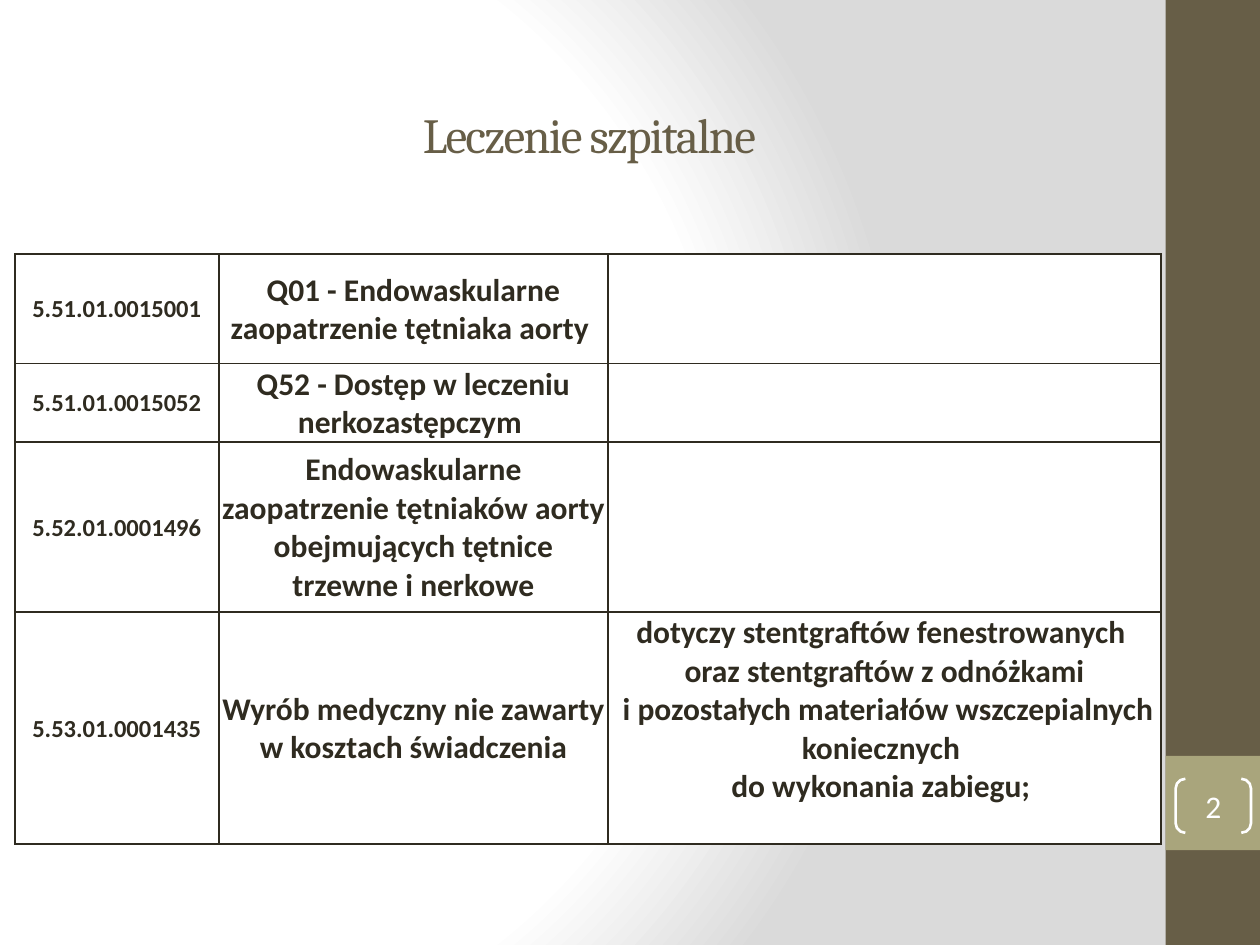
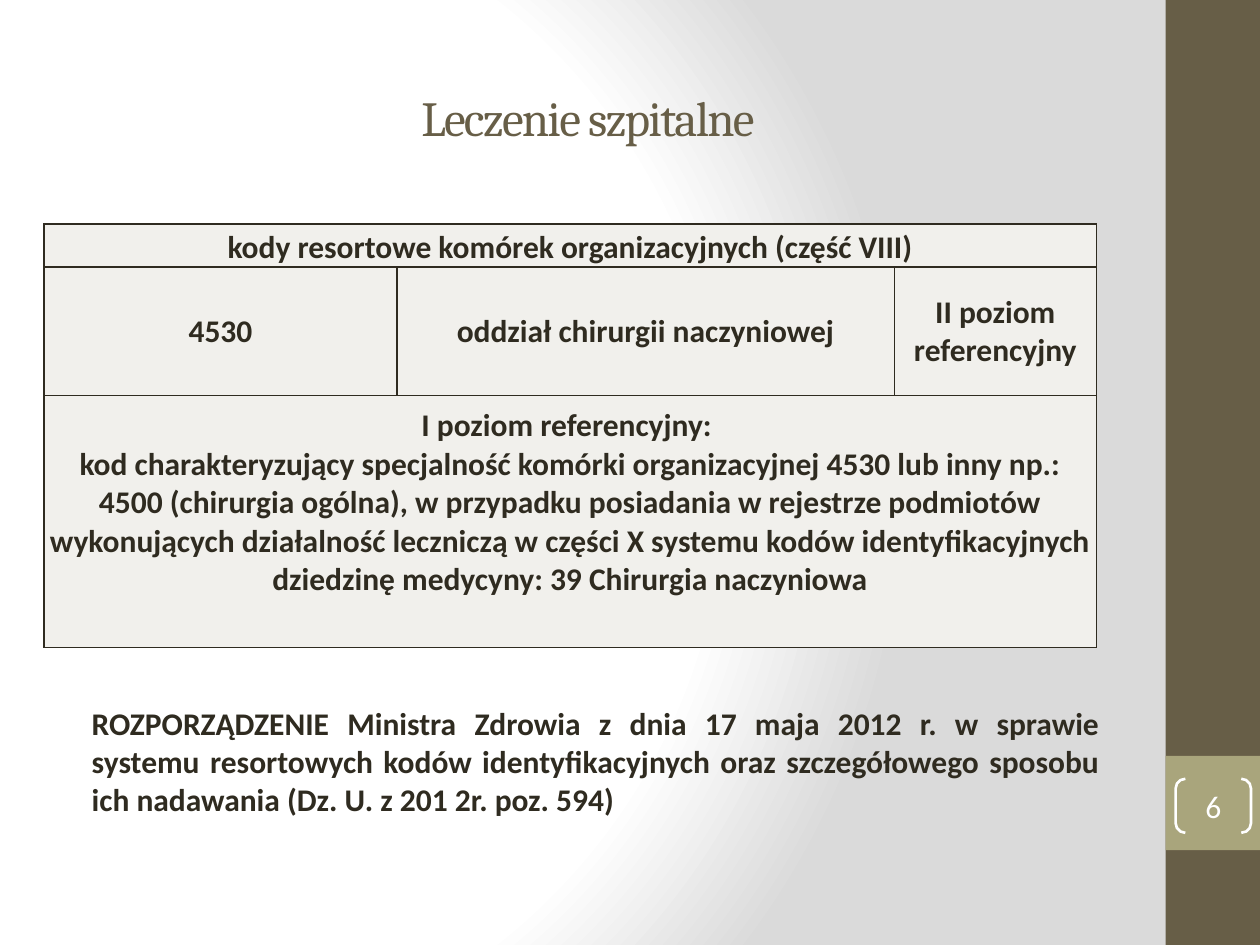
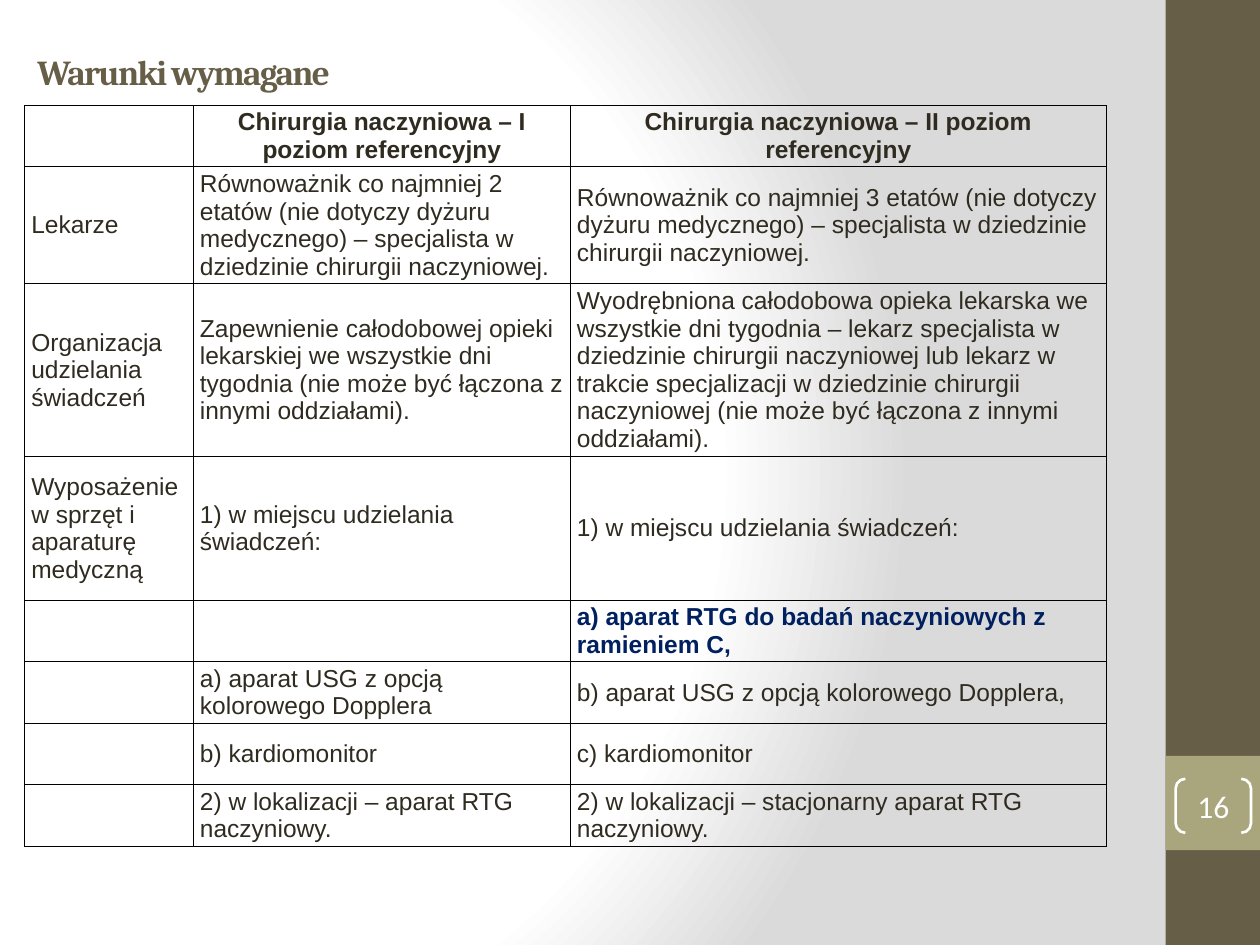
from dataclasses import dataclass, replace
from typing import Optional

import lxml.etree
import pptx
import pptx.dml.color
import pptx.enum.shapes
import pptx.enum.text
import pptx.oxml
import pptx.oxml.ns
import pptx.util

Cm = pptx.util.Cm
Pt = pptx.util.Pt
Align = pptx.enum.text.PP_ALIGN
Anchor = pptx.enum.text.MSO_ANCHOR
Shape = pptx.enum.shapes.MSO_SHAPE
qn = pptx.oxml.ns.qn


@dataclass(frozen=True)
class Theme:
    ink: str = "2F2B20"
    brown: str = "675E47"
    olive: str = "A9A57C"
    white: str = "FFFFFF"
    gray: str = "DADADA"
    pale: str = "F1F0EC"
    navy: str = "002060"
    black: str = "000000"
    head: str = "Cambria"
    body: str = "Calibri"
    plain: str = "Arial"
    title: int = 28
    minor: int = 20
    text: int = 18
    small: int = 14


THEME = Theme()


@dataclass(frozen=True)
class Style:
    """Look of a block of text, and of the cell that holds it."""
    font: str = THEME.body
    size: int = THEME.text
    color: str = THEME.ink
    bold: bool = True
    align: Align = Align.CENTER
    anchor: Anchor = Anchor.MIDDLE
    pads: tuple = (0.03, 0.03, 0.03, 0)  # left, top, right, bottom in cm
    fill: Optional[str] = None
    edge: str = THEME.ink
    width: float = 1


def tint(color):
    return pptx.dml.color.RGBColor.from_string(color)


def write(frame, text, style):
    frame.text = text
    frame.word_wrap = True
    for para in frame.paragraphs:
        para.alignment = style.align
        para.font.name = style.font
        para.font.size = Pt(style.size)
        para.font.bold = style.bold
        para.font.color.rgb = tint(style.color)


def pad(item, pads):
    """Set the margins of a cell or a text frame."""
    item.margin_left, item.margin_top, item.margin_right, item.margin_bottom = map(Cm, pads)


def add_block(slide, kind, box, fill=None):
    shape = slide.shapes.add_shape(kind, *map(Cm, box))
    shape.shadow.inherit = False
    shape.line.fill.background()
    if fill:
        shape.fill.solid()
        shape.fill.fore_color.rgb = tint(fill)
    else:
        shape.fill.background()
    return shape


def set_back(master):
    """Give the master a round gradient that darkens to the right."""
    master.background.fill.solid()
    solid = master.element.find(".//" + qn("a:solidFill"))
    stops = ((0, THEME.white), (75, THEME.white), (100, THEME.gray))
    marks = "".join(
        f'<a:gs pos="{pos * 1000}"><a:srgbClr val="{color}"/></a:gs>' for pos, color in stops)
    grad = pptx.oxml.parse_xml(
        f'<a:gradFill {pptx.oxml.ns.nsdecls("a")} rotWithShape="1"><a:gsLst>{marks}</a:gsLst>'
        '<a:path path="circle"><a:fillToRect l="20000" t="50000" r="100000" b="50000"/></a:path>'
        '</a:gradFill>')
    solid.getparent().replace(solid, grad)


def set_bands(master, slide):
    """Draw the side bands on a slide, then move them to the master."""
    bands = (((23.5, 0, 1.9, 19.05), THEME.brown), ((23.5, 15.24, 1.9, 1.9), THEME.olive))
    for n, (box, fill) in enumerate(bands):
        band = add_block(slide, Shape.RECTANGLE, box, fill)
        band.element.nvSpPr.cNvPr.set("id", str(100 + n))
        master.element.cSld.spTree.insert(2 + n, band.element)


def add_title(slide, text, box, size=THEME.title, bold=False, align=Align.CENTER):
    title = slide.shapes.title
    title.left, title.top, title.width, title.height = map(Cm, box)
    frame = title.text_frame
    write(frame, text, Style(THEME.head, size, THEME.brown, bold, align))
    frame.vertical_anchor = Anchor.MIDDLE
    for run in frame.paragraphs[0].runs:
        run.font._element.set("spc", "-100")


def add_number(slide, number):
    mark = add_block(slide, Shape.DOUBLE_BRACKET, (23.7, 15.7, 1.52, 1.09))
    mark.adjustments[0] = 0.18
    mark.line.color.rgb = tint(THEME.white)
    mark.line.width = Pt(1.5)
    frame = mark.text_frame
    write(frame, str(number), Style(color=THEME.white, bold=False))
    frame.vertical_anchor = Anchor.MIDDLE
    pad(frame, (0, 0, 0, 0))


def add_note(slide, text, box):
    frame = slide.shapes.add_textbox(*map(Cm, box)).text_frame
    write(frame, text, Style(align=Align.JUSTIFY))
    pad(frame, (0, 0, 0, 0))


def set_edges(cell, color, width):
    props = cell._tc.get_or_add_tcPr()
    for n, side in enumerate("LRTB"):
        line = lxml.etree.Element(qn("a:ln" + side), w=str(int(Pt(width))))
        solid = lxml.etree.SubElement(line, qn("a:solidFill"))
        lxml.etree.SubElement(solid, qn("a:srgbClr"), val=color)
        props.insert(n, line)


def set_cell(cell, text, style):
    write(cell.text_frame, text, style)
    pad(cell, style.pads)
    cell.vertical_anchor = style.anchor
    if style.fill:
        cell.fill.solid()
        cell.fill.fore_color.rgb = tint(style.fill)
    else:
        cell.fill.background()
    set_edges(cell, style.edge, style.width)


def add_grid(slide, spot, cols, rows, texts, pick):
    """Add a table; pick(row, col) gives each cell's style."""
    size = (sum(cols), sum(rows))
    frame = slide.shapes.add_table(len(rows), len(cols), *map(Cm, spot + size))
    table = frame.table
    table.first_row = table.horz_banding = False
    for col, width in zip(table.columns, cols):
        col.width = Cm(width)
    for row, height in zip(table.rows, rows):
        row.height = Cm(height)
    for r, line in enumerate(texts):
        for c, text in enumerate(line):
            set_cell(table.cell(r, c), text, pick(r, c))
    return table


def fill_codes(slide):
    add_title(slide, "Leczenie szpitalne", (1.3, 1.32, 21.16, 2.77))
    base = Style(fill=THEME.white)
    code = replace(base, size=THEME.small)
    last = replace(base, pads=(0.03, 0.03, 0.03, 0.77))
    texts = (
        ("5.51.01.0015001", "Q01 - Endowaskularne zaopatrzenie tętniaka aorty ", ""),
        ("5.51.01.0015052", "Q52 - Dostęp w leczeniu nerkozastępczym ", ""),
        ("5.52.01.0001496", "Endowaskularne zaopatrzenie tętniaków aorty "
         "obejmujących tętnice trzewne i nerkowe", ""),
        ("5.53.01.0001435", "Wyrób medyczny nie zawarty w kosztach świadczenia",
         "dotyczy stentgraftów fenestrowanych \noraz stentgraftów z odnóżkami\n"
         " i pozostałych materiałów wszczepialnych koniecznych \ndo wykonania zabiegu; "),
    )

    def pick(row, col):
        if col == 0:
            return code
        return last if (row, col) == (3, 2) else base

    add_grid(slide, (0.3, 5.12), (4.11, 7.85, 11.14), (2.21, 1.57, 3.43, 4.62), texts, pick)
    add_number(slide, 2)


def fill_units(slide):
    add_title(slide, "Leczenie szpitalne", (1.27, 0.76, 21.16, 3.18))
    base = Style(fill=THEME.pale)
    looks = (replace(base, anchor=Anchor.BOTTOM), base,
             replace(base, pads=(0.03, 0.03, 0.03, 0.77)))
    texts = (
        ("kody resortowe komórek organizacyjnych (część VIII)", "", ""),
        ("4530", "oddział chirurgii naczyniowej", "II poziom referencyjny"),
        ("I poziom referencyjny: \n"
         "kod charakteryzujący specjalność komórki organizacyjnej 4530 lub inny np.: "
         "4500 (chirurgia ogólna), w przypadku posiadania w rejestrze podmiotów "
         "wykonujących działalność leczniczą w części X systemu kodów identyfikacyjnych "
         "dziedzinę medycyny: 39 Chirurgia naczyniowa", "", ""),
    )
    table = add_grid(slide, (0.89, 4.52), (7.11, 10.03, 4.07), (0.86, 2.59, 5.08), texts,
                     lambda row, col: looks[row])
    for row in (0, 2):
        table.cell(row, 0).merge(table.cell(row, 2))
    add_note(slide, "ROZPORZĄDZENIE Ministra Zdrowia z dnia 17 maja 2012 r. w sprawie systemu "
             "resortowych kodów identyfikacyjnych oraz szczegółowego sposobu ich nadawania "
             "(Dz. U. z 201 2r. poz. 594)", (1.85, 14.2, 20.32, 2.4))
    add_number(slide, 6)


def fill_terms(slide):
    add_title(slide, "Warunki wymagane", (0.5, 0.74, 21.16, 1.4), THEME.minor, True, Align.LEFT)
    base = Style(THEME.plain, THEME.small, bold=False, align=Align.LEFT,
                 pads=(0.13, 0.06, 0.13, 0.06), edge=THEME.black, width=0.75)
    head = replace(base, bold=True, align=Align.CENTER)
    stress = replace(base, bold=True, color=THEME.navy)
    texts = (
        ("", "Chirurgia naczyniowa – I poziom referencyjny",
         "Chirurgia naczyniowa – II poziom referencyjny"),
        ("Lekarze",
         "Równoważnik co najmniej 2 etatów (nie dotyczy dyżuru medycznego) – "
         "specjalista w dziedzinie chirurgii naczyniowej.",
         "Równoważnik co najmniej 3 etatów (nie dotyczy dyżuru medycznego) – "
         "specjalista w dziedzinie chirurgii naczyniowej."),
        ("Organizacja udzielania świadczeń",
         "Zapewnienie całodobowej opieki lekarskiej we wszystkie dni tygodnia "
         "(nie może być łączona z innymi oddziałami).",
         "Wyodrębniona całodobowa opieka lekarska we wszystkie dni tygodnia – lekarz "
         "specjalista w dziedzinie chirurgii naczyniowej lub lekarz w trakcie specjalizacji "
         "w dziedzinie chirurgii naczyniowej (nie może być łączona z innymi oddziałami)."),
        ("Wyposażenie w sprzęt i aparaturę medyczną",
         "1) w miejscu udzielania świadczeń:", "1) w miejscu udzielania świadczeń:"),
        ("", "", "a) aparat RTG do badań naczyniowych z ramieniem C,"),
        ("", "a) aparat USG z opcją kolorowego Dopplera",
         "b) aparat USG z opcją kolorowego Dopplera,"),
        ("", "b) kardiomonitor", "c) kardiomonitor"),
        ("", "2) w lokalizacji – aparat RTG naczyniowy.",
         "2) w lokalizacji – stacjonarny aparat RTG naczyniowy."),
    )

    def pick(row, col):
        if row == 0:
            return head
        return stress if (row, col) == (4, 2) else base

    rows = (1.23, 2.36, 3.48, 2.9) + (1.24,) * 4
    add_grid(slide, (0.5, 2.13), (3.4, 7.6, 10.8), rows, texts, pick)
    add_number(slide, 16)


def main():
    deck = pptx.Presentation()
    deck.slide_width, deck.slide_height = Cm(25.4), Cm(19.05)
    master = deck.slide_master
    set_back(master)
    layout = deck.slide_layouts.get_by_name("Title Only")
    for n, fill in enumerate((fill_codes, fill_units, fill_terms)):
        slide = deck.slides.add_slide(layout)
        if n == 0:
            set_bands(master, slide)
        fill(slide)
    deck.save("out.pptx")


if __name__ == "__main__":
    main()
